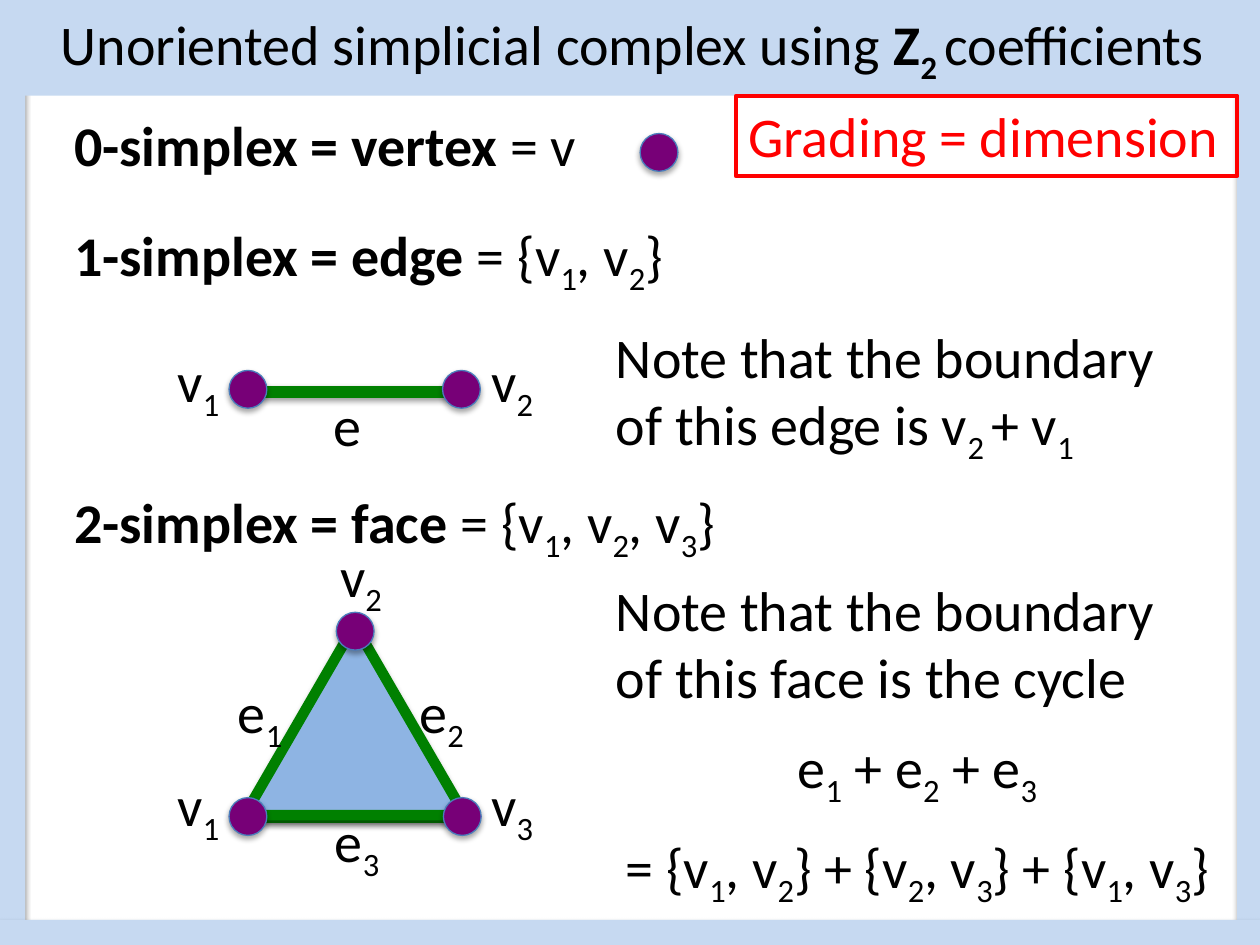
"""Build a slide on unoriented simplicial complexes with Z2 coefficients."""
from typing import NamedTuple

from lxml.etree import SubElement
from pptx import Presentation
from pptx.dml.color import RGBColor
from pptx.enum.shapes import MSO_CONNECTOR as Connector, MSO_SHAPE as Preset
from pptx.enum.text import MSO_ANCHOR as Anchor, MSO_AUTO_SIZE as AutoSize, PP_ALIGN as Align
from pptx.oxml.ns import qn
from pptx.util import Pt

BLACK = RGBColor(0x00, 0x00, 0x00)
RED = RGBColor(0xFF, 0x00, 0x00)
GREEN = RGBColor(0x00, 0x80, 0x00)
PURPLE = RGBColor(0x77, 0x00, 0x77)
DOT_OUTLINE = RGBColor(0x4B, 0x7E, 0xBC)
FACE_BLUE = RGBColor(0x8E, 0xB4, 0xE3)
FRAME_BLUE = RGBColor(0xC6, 0xD9, 0xF1)
DOT_SIZE = 21.6


class Box(NamedTuple):
    left: float
    top: float
    width: float
    height: float

    def points(self) -> list:
        return [Pt(length) for length in self]


class Label(NamedTuple):
    text: str
    left: float
    top: float


class Edge(NamedTuple):
    start: float
    end: float
    y: float
    weight: float


class Bar(NamedTuple):
    box: Box
    shadowed: bool


def write(frame, text: str, *, color=BLACK, aligns=(), spacings=()) -> None:
    """Write lines of runs split by |, where * marks bold and _ marks a subscript."""
    frame.word_wrap = True
    frame.auto_size = AutoSize.NONE
    for index, line in enumerate(text.split("\n")):
        paragraph = frame.paragraphs[0] if index == 0 else frame.add_paragraph()
        paragraph.alignment = aligns[index] if aligns else Align.LEFT
        if spacings:
            paragraph.line_spacing = spacings[index]
        for piece in line.split("|"):
            marks = piece[:2]
            run = paragraph.add_run()
            run.text = piece.lstrip("*_")
            run.font.name = "Calibri"
            run.font.size = Pt(32)
            run.font.bold = "*" in marks
            run.font.color.rgb = color
            if "_" in marks:
                run._r.get_or_add_rPr().set("baseline", "-25000")


def add_text(slide, text: str, box: Box, **style):
    textbox = slide.shapes.add_textbox(*box.points())
    write(textbox.text_frame, text, **style)
    return textbox


def cast_shadow(shape, distance: float = 1.8, opacity: int = 35) -> None:
    effects = SubElement(shape.element.spPr, qn("a:effectLst"))
    shadow = SubElement(effects, qn("a:outerShdw"), blurRad=str(Pt(3.15)),
                        dist=str(Pt(distance)), dir="5400000", rotWithShape="0")
    color = SubElement(shadow, qn("a:srgbClr"), val=str(BLACK))
    SubElement(color, qn("a:alpha"), val=str(opacity * 1000))


def add_figure(slide, preset, box: Box, fill, outline=None, weight=0.75, shadowed=True) -> None:
    figure = slide.shapes.add_shape(preset, *box.points())
    figure.fill.solid()
    figure.fill.fore_color.rgb = fill
    if outline is None:
        figure.line.fill.background()
    else:
        figure.line.color.rgb = outline
        figure.line.width = Pt(weight)
    if shadowed:
        cast_shadow(figure)
    else:
        figure.shadow.inherit = False


def add_vertex(slide, x: float, y: float) -> None:
    box = Box(x - DOT_SIZE / 2, y - DOT_SIZE / 2, DOT_SIZE, DOT_SIZE)
    add_figure(slide, Preset.OVAL, box, PURPLE, DOT_OUTLINE)


def add_edge(slide, edge: Edge) -> None:
    line = slide.shapes.add_connector(Connector.STRAIGHT, Pt(edge.start), Pt(edge.y),
                                      Pt(edge.end), Pt(edge.y))
    line.line.color.rgb = GREEN
    line.line.width = Pt(edge.weight)
    cast_shadow(line, distance=1.6, opacity=38)


EDGES = [Edge(260, 150, 468, 5), Edge(259.2, 150, 223.9, 7)]
VERTICES = [
    (141.7, 466.6), (264.2, 466.6), (203, 360.7),
    (141.7, 222.5), (263.7, 222.5),
    (376.6, 87.1),
]
LABELS = [
    Label("v|_2", 187.2, 306), Label("e|_2", 232.6, 383.8), Label("e|_1", 128.9, 383.8),
    Label("e|_3", 184.3, 457.2), Label("v|_1", 94.3, 437), Label("v|_3", 273.6, 437),
    Label("e", 183.6, 219.6), Label("v|_1", 94.3, 194.4), Label("v|_2", 273.6, 194.4),
]
DEFINITIONS = [
    Label("*0-simplex = vertex |= v", 35.3, 59.8),
    Label("*1-simplex = edge |= {v|_1|, v|_2|}", 35.3, 122.4),
    Label("*2-simplex = face |= {v|_1|, v|_2|, v|_3|}", 35.3, 275),
]
EDGE_NOTE = "Note that the boundary of this edge is v|_2 |+ v|_1"
FACE_NOTE = (
    "Note that the boundary\nof this face is the cycle\n"
    "e|_1| + e|_2| + e|_3\n"
    "= {v|_1|, v|_2|} + {v|_2|, v|_3|} + {v|_1|, v|_3|}"
)
FRAME = [
    Bar(Box(0, 0, 14.4, 540), True),
    Bar(Box(707, 0, 14.4, 540), True),
    Bar(Box(1.4, 0, 720.7, 14.4), False),
    Bar(Box(-0.7, 525.6, 720.7, 14.4), True),
]


def main() -> None:
    deck = Presentation()
    deck.slide_width, deck.slide_height = Pt(720), Pt(540)
    slide = deck.slides.add_slide(deck.slide_layouts[5])

    for edge in EDGES:
        add_edge(slide, edge)
    add_figure(slide, Preset.ISOSCELES_TRIANGLE, Box(139.7, 357.1, 126, 108.7),
               FACE_BLUE, GREEN, weight=6)
    for x, y in VERTICES:
        add_vertex(slide, x, y)
    for label in LABELS:
        add_text(slide, label.text, Box(label.left, label.top, 51.1, 46))
    for definition in DEFINITIONS:
        add_text(slide, definition.text, Box(definition.left, definition.top, 651.6, 46))
    add_text(slide, EDGE_NOTE, Box(344.9, 180.7, 341.3, 85))
    add_text(slide, FACE_NOTE, Box(344.9, 325.4, 358.6, 183.6),
             aligns=(Align.LEFT, Align.LEFT, Align.CENTER, Align.CENTER),
             spacings=(1.0, 1.0, 1.3, 1.3))
    for bar in FRAME:
        add_figure(slide, Preset.RECTANGLE, bar.box, FRAME_BLUE, shadowed=bar.shadowed)

    title = slide.shapes.title
    title.left, title.top, title.width, title.height = Box(1.4, 0, 720, 54.7).points()
    title.fill.solid()
    title.fill.fore_color.rgb = FRAME_BLUE
    title.text_frame.vertical_anchor = Anchor.MIDDLE
    write(title.text_frame, "Unoriented simplicial complex using|* Z|*_2 |coefficients",
          aligns=(Align.CENTER,))
    title.element.getparent().append(title.element)

    grading = add_text(slide, "Grading = dimension", Box(420.5, 54.7, 286.6, 46), color=RED)
    grading.line.color.rgb = RED
    grading.line.width = Pt(2.25)
    deck.save("out.pptx")


if __name__ == "__main__":
    main()
